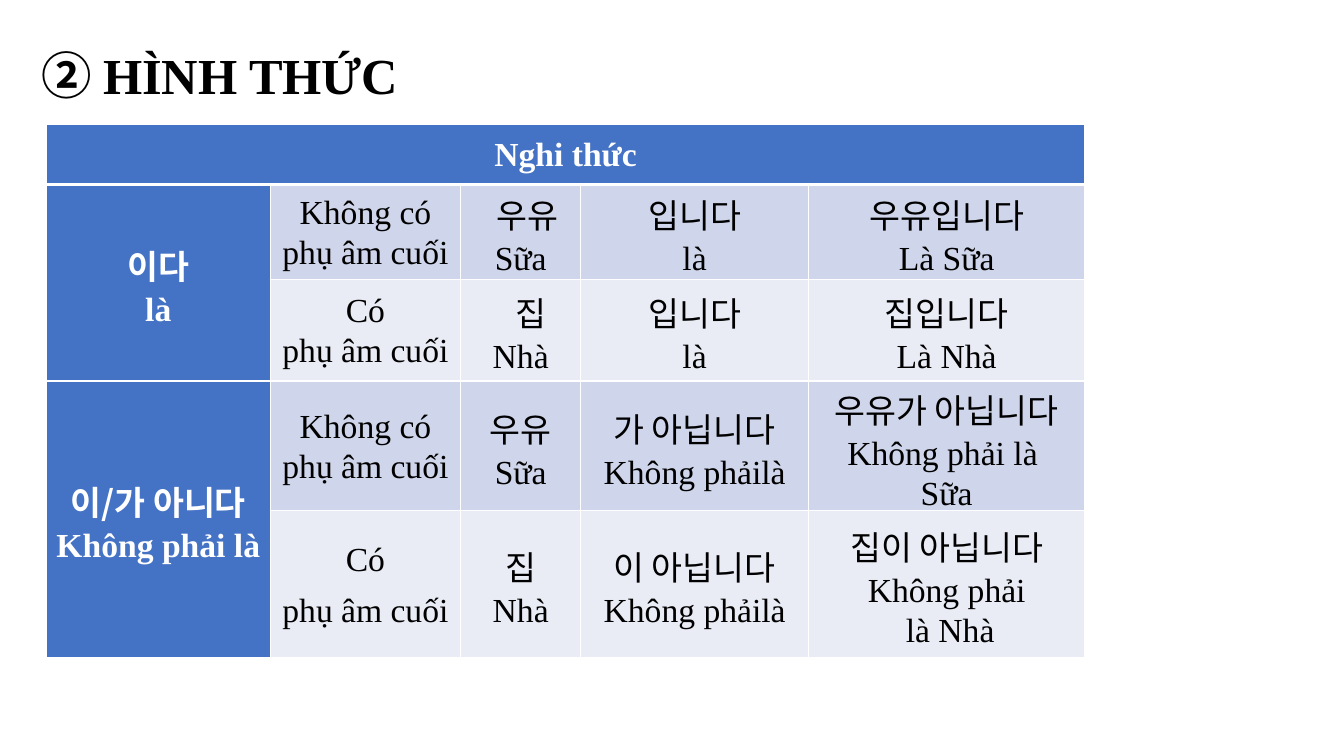
"""Build a slide with a table of formal Korean copula forms in Vietnamese."""
from typing import NamedTuple

from lxml import etree
from pptx import Presentation
from pptx import util as u
from pptx.dml.color import RGBColor
from pptx.enum import text
from pptx.oxml import ns

WHITE = RGBColor(0xFF, 0xFF, 0xFF)
BLACK = RGBColor(0, 0, 0)
BLUE = RGBColor(0x44, 0x72, 0xC4)
BAND = RGBColor(0xCF, 0xD5, 0xEA)
PALE = RGBColor(0xE9, 0xEB, 0xF5)
HANGUL = "Noto Sans CJK KR"
LATIN = "Times New Roman"
WIDTHS = [2.22, 1.89, 1.19, 2.26, 2.74]
HEIGHTS = [0.6, 0.94, 1.01, 1.15, 1.46]
LAST = len(HEIGHTS) - 1


class Entry(NamedTuple):
    row: int
    col: int
    lines: list[str]
    dents: tuple[float, ...] = ()
    span: tuple[int, int] = (1, 1)


ENTRIES = [
    Entry(0, 0, ["Nghi thức"], span=(1, 5)),
    Entry(1, 0, ["이다", "là"], span=(2, 1)),
    Entry(1, 1, ["Không có", "phụ âm cuối"]),
    Entry(1, 2, ["우유", "Sữa"], (0.14, 0)),
    Entry(1, 3, ["입니다", "là"]),
    Entry(1, 4, ["우유입니다", "Là Sữa"]),
    Entry(2, 1, ["Có", "phụ âm cuối"]),
    Entry(2, 2, ["집", "Nhà"], (0.21, 0)),
    Entry(2, 3, ["입니다", "là"]),
    Entry(2, 4, ["집입니다", "Là Nhà"]),
    Entry(3, 0, ["이/가 아니다", "Không phải là"], span=(2, 1)),
    Entry(3, 1, ["Không có", "phụ âm cuối"]),
    Entry(3, 2, ["우유", "Sữa"]),
    Entry(3, 3, ["가 아닙니다", "Không phảilà"]),
    Entry(3, 4, ["우유가 아닙니다", "Không phải là ", "Sữa"]),
    Entry(4, 1, ["Có", "phụ âm cuối"]),
    Entry(4, 2, ["집", "Nhà"]),
    Entry(4, 3, ["이 아닙니다", "Không phảilà"]),
    Entry(4, 4, ["집이 아닙니다", "Không phải", "là Nhà"], (0, 0, 0.07)),
]


def apply(item: object, style: dict) -> None:
    for key, value in style.items():
        setattr(item, key, value)


def add_run(para: object, words: str, size: float, bold: bool, color: RGBColor) -> None:
    run = para.add_run()
    run.text = words
    face = HANGUL if any(char >= "①" for char in words) else LATIN
    apply(run.font, {"name": face, "size": u.Pt(size), "bold": bold})
    run.font.color.rgb = color
    etree.SubElement(run._r.get_or_add_rPr(), ns.qn("a:ea"), typeface=face)


def add_edge(cell: object, side: str, width: float) -> None:
    props = cell._tc.get_or_add_tcPr()
    line = etree.SubElement(props, ns.qn(f"a:ln{side}"), w=str(u.Pt(width)))
    fill = etree.SubElement(line, ns.qn("a:solidFill"))
    etree.SubElement(fill, ns.qn("a:srgbClr"), val=str(WHITE))


def style_cell(cell: object, row: int, col: int) -> None:
    for side in "LRTB":
        thick = (row, side) in ((0, "B"), (1, "T"))
        add_edge(cell, side, 3 if thick else 1)
    cell.fill.solid()
    band = BAND if row % 2 else PALE
    cell.fill.fore_color.rgb = BLUE if row == 0 or col == 0 else band
    side = u.Inches(0 if row == LAST else 0.07)
    apply(cell, {
        "margin_left": side, "margin_right": side,
        "margin_top": 0, "margin_bottom": 0,
        "vertical_anchor": text.MSO_ANCHOR.MIDDLE,
    })


def fill_cell(table: object, entry: Entry) -> None:
    cell = table.cell(entry.row, entry.col)
    if entry.span != (1, 1):
        down, wide = entry.span
        cell.merge(table.cell(entry.row + down - 1, entry.col + wide - 1))
    head = entry.row == 0 or entry.col == 0
    spaced = (entry.row, entry.col) == (LAST, 1)
    frame = cell.text_frame
    for i, words in enumerate(entry.lines):
        para = frame.add_paragraph() if i else frame.paragraphs[0]
        apply(para, {
            "alignment": text.PP_ALIGN.CENTER, "line_spacing": 1.07,
            "space_after": u.Pt(8 if spaced else 0),
        })
        if entry.dents and entry.dents[i]:
            para._p.get_or_add_pPr().set("indent", str(u.Inches(entry.dents[i])))
        add_run(para, words, 24, head, WHITE if head else BLACK)


def add_title(slide: object) -> None:
    title = slide.shapes.title
    apply(title, {
        "left": u.Inches(0.31), "top": u.Inches(0.35),
        "width": u.Inches(7.28), "height": u.Inches(0.7),
    })
    apply(title.text_frame, {
        "word_wrap": True, "vertical_anchor": text.MSO_ANCHOR.TOP,
        "auto_size": text.MSO_AUTO_SIZE.SHAPE_TO_FIT_TEXT,
    })
    para = title.text_frame.paragraphs[0]
    apply(para, {
        "alignment": text.PP_ALIGN.JUSTIFY, "line_spacing": 1.07,
        "space_before": u.Pt(0), "space_after": u.Pt(8),
    })
    for words in ("② ", "HÌNH THỨC"):
        add_run(para, words, 36, True, BLACK)


def add_forms(slide: object) -> None:
    table = slide.shapes.add_table(
        len(HEIGHTS), len(WIDTHS), u.Inches(0.46), u.Inches(1.23),
        u.Inches(sum(WIDTHS)), u.Inches(sum(HEIGHTS))).table
    apply(table, {"first_row": False, "horz_banding": False})
    for column, width in zip(table.columns, WIDTHS):
        column.width = u.Inches(width)
    for row, height in zip(table.rows, HEIGHTS):
        row.height = u.Inches(height)
    for row in range(len(HEIGHTS)):
        for col in range(len(WIDTHS)):
            style_cell(table.cell(row, col), row, col)
    for entry in ENTRIES:
        fill_cell(table, entry)


def main() -> None:
    deck = Presentation()
    apply(deck, {"slide_width": u.Inches(13.33), "slide_height": u.Inches(7.5)})
    slide = deck.slides.add_slide(deck.slide_layouts[5])
    add_title(slide)
    add_forms(slide)
    deck.save("out.pptx")


if __name__ == "__main__":
    main()
